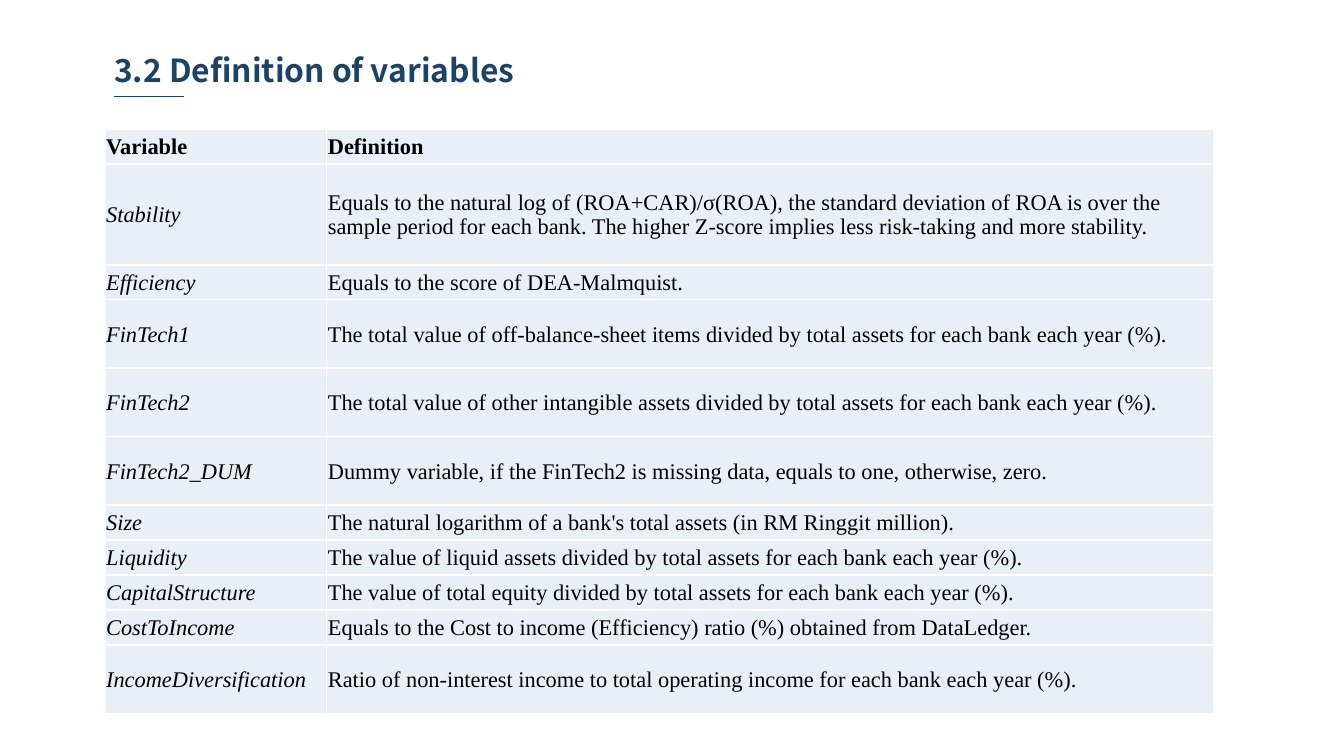
from dataclasses import dataclass

from lxml import etree
from pptx import Presentation
from pptx.dml.color import RGBColor
from pptx.enum.shapes import MSO_CONNECTOR
from pptx.enum.text import MSO_ANCHOR, MSO_AUTO_SIZE, PP_ALIGN
from pptx.oxml.ns import qn
from pptx.util import Inches, Pt

MIDDLE = MSO_ANCHOR.MIDDLE
LEFT = PP_ALIGN.LEFT
NO_FIT = MSO_AUTO_SIZE.NONE
STRAIGHT = MSO_CONNECTOR.STRAIGHT


@dataclass(frozen=True)
class Theme:
    navy: str = "1B4367"
    ink: str = "000000"
    pale: str = "EAEFF7"
    white: str = "FFFFFF"
    head: str = "Noto Sans CJK SC"
    body: str = "Times New Roman"
    head_size: int = 17
    body_size: int = 12


THEME = Theme()

SHORT, MID, TALL = 0.26, 0.51, 0.75
ROWS = [
    (SHORT, "Variable", "Definition"),
    (TALL, "Stability",
     "Equals to the natural log of (ROA+CAR)/σ(ROA), the standard deviation "
     "of ROA is over the sample period for each bank. The higher Z-score "
     "implies less risk-taking and more stability."),
    (SHORT, "Efficiency", "Equals to the score of DEA-Malmquist."),
    (MID, "FinTech1",
     "The total value of off-balance-sheet items divided by total assets "
     "for each bank each year (%)."),
    (MID, "FinTech2",
     "The total value of other intangible assets divided by total assets "
     "for each bank each year (%)."),
    (MID, "FinTech2_DUM",
     "Dummy variable, if the FinTech2 is missing data, equals to one, "
     "otherwise, zero."),
    (SHORT, "Size",
     "The natural logarithm of a bank's total assets (in RM Ringgit million)."),
    (SHORT, "Liquidity",
     "The value of liquid assets divided by total assets for each bank "
     "each year (%)."),
    (SHORT, "CapitalStructure",
     "The value of total equity divided by total assets for each bank "
     "each year (%)."),
    (SHORT, "CostToIncome",
     "Equals to the Cost to income (Efficiency) ratio (%) obtained from "
     "DataLedger."),
    (MID, "IncomeDiversification",
     "Ratio of non-interest income to total operating income for each bank "
     "each year (%)."),
]
COLS = [1.65, 6.6]


def add_run(par, text, font, size, color, bold=False, italic=False):
    run = par.add_run()
    run.text = text
    run.font.name = font
    run.font.size = Pt(size)
    run.font.bold = bold
    run.font.italic = italic
    run.font.color.rgb = RGBColor.from_string(color)


def add_edges(cell, color, width):
    """Draw all four cell borders; call before the fill is set."""
    props = cell._tc.get_or_add_tcPr()
    for side in ("lnL", "lnR", "lnT", "lnB"):
        edge = etree.SubElement(props, qn(f"a:{side}"), w=str(Pt(width)))
        fill = etree.SubElement(edge, qn("a:solidFill"))
        etree.SubElement(fill, qn("a:srgbClr"), val=color)


prs = Presentation()
prs.slide_width = Inches(10)
prs.slide_height = prs.slide_width * 9 // 16
slide = prs.slides.add_slide(prs.slide_layouts[5])

# Title and its short rule
title = slide.shapes.title
title.left, title.top = Inches(0.78), Inches(0.34)
title.width, title.height = Inches(5.72), Inches(0.36)
frame = title.text_frame
frame.auto_size = NO_FIT
frame.word_wrap = True
frame.vertical_anchor = MIDDLE
frame.margin_left = frame.margin_right = Inches(0.07)
frame.margin_top = frame.margin_bottom = Inches(0.04)
par = frame.paragraphs[0]
par.alignment = LEFT
add_run(par, "3.2 Definition of variables", THEME.head, THEME.head_size,
        THEME.navy, bold=True)

rule = slide.shapes.add_connector(
    STRAIGHT, Inches(0.85), Inches(0.72), Inches(1.37), Inches(0.72))
rule.line.color.rgb = RGBColor.from_string(THEME.navy)
rule.line.width = Pt(0.75)
etree.SubElement(rule._element.spPr, qn("a:effectLst"))

# Table of variables
table = slide.shapes.add_table(
    len(ROWS), len(COLS), Inches(0.78), Inches(0.96),
    Inches(sum(COLS)), Inches(sum(row[0] for row in ROWS))).table
table.first_row = table.horz_banding = False
for col, width in zip(table.columns, COLS):
    col.width = Inches(width)

for r, (height, *texts) in enumerate(ROWS):
    table.rows[r].height = Inches(height)
    for c, text in enumerate(texts):
        cell = table.cell(r, c)
        cell.vertical_anchor = MIDDLE
        cell.margin_left = cell.margin_right = cell.margin_top = Inches(0.01)
        cell.margin_bottom = 0
        add_edges(cell, THEME.white, 1)
        cell.fill.solid()
        cell.fill.fore_color.rgb = RGBColor.from_string(THEME.pale)
        add_run(cell.text_frame.paragraphs[0], text, THEME.body,
                THEME.body_size, THEME.ink, bold=r == 0,
                italic=r > 0 and c == 0)

prs.save("out.pptx")
